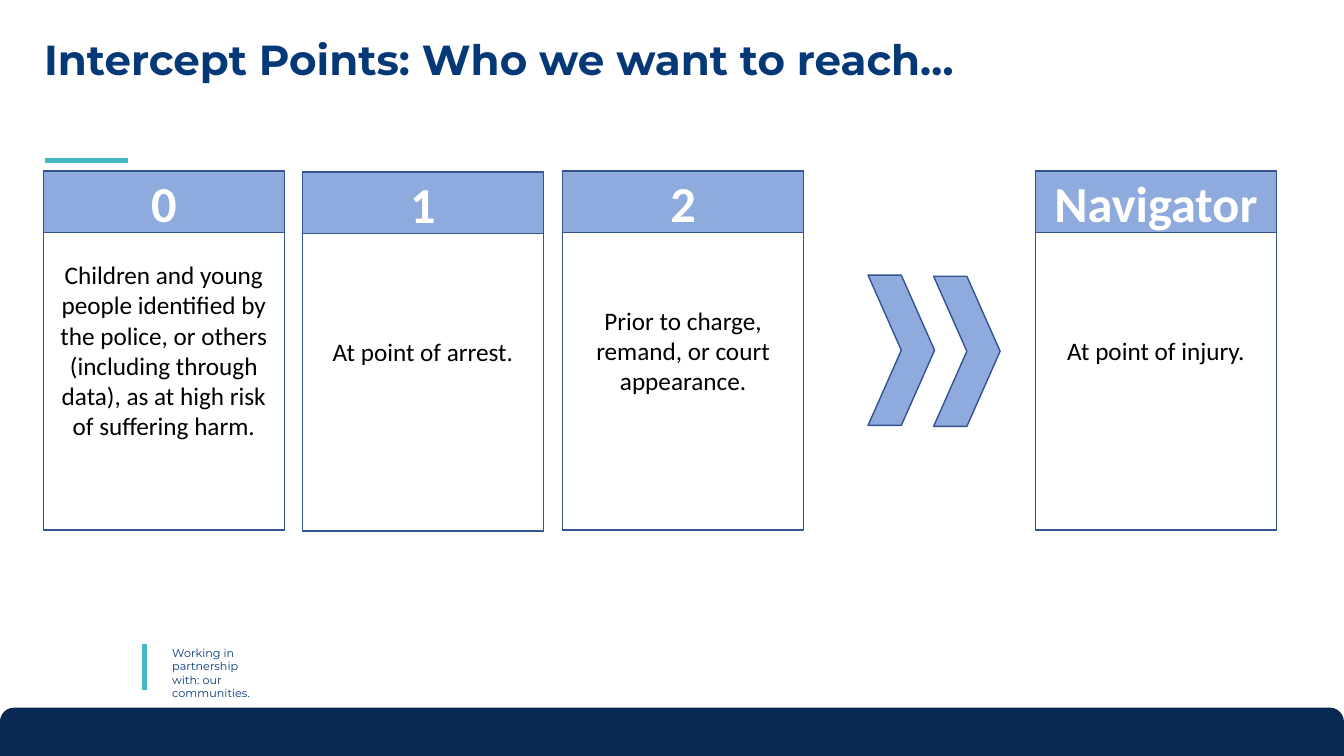
from pptx import Presentation
from pptx.dml.color import RGBColor
from pptx.enum.shapes import MSO_CONNECTOR, MSO_SHAPE
from pptx.enum.text import MSO_ANCHOR, PP_ALIGN
from pptx.oxml.ns import qn
from pptx.util import Emu, Pt

RECTANGLE = MSO_SHAPE.RECTANGLE
ROUNDED = MSO_SHAPE.ROUNDED_RECTANGLE
CHEVRON = MSO_SHAPE.CHEVRON
STRAIGHT = MSO_CONNECTOR.STRAIGHT
TOP, MIDDLE = MSO_ANCHOR.TOP, MSO_ANCHOR.MIDDLE
LEFT, CENTER = PP_ALIGN.LEFT, PP_ALIGN.CENTER

EMU_PER_PX = 9144
SLIDE_WIDTH, SLIDE_HEIGHT = 1333, 750
NAVY, BLUE, TEAL = "082A52", "043876", "43BAC3"
PALE_BLUE, OUTLINE = "8FAADC", "325491"
WHITE, BLACK = "FFFFFF", "000000"
CARD_WIDTH, CARD_HEIGHT, HEADER_HEIGHT = 239, 357, 61

CARDS = [
    (43, 169, "0", "Children and young people identified by the police, or others "
     "(including through data), as at high risk of suffering harm."),
    (300, 170, "1", "At point of arrest."),
    (558, 169, "2", "Prior to charge, remand, or court appearance."),
    (1027, 169, "Navigator", "At point of injury."),
]


def px(length):
    """Turn whole px into EMU."""
    return Emu(length * EMU_PER_PX)


def color(hex_value):
    """Turn a hex string into a colour."""
    return RGBColor.from_string(hex_value)


def write(shape, text, size, font_name, hex_value, bold=False, align=LEFT, anchor=TOP):
    """Fill a shape with evenly formatted text."""
    frame = shape.text_frame
    frame.text = text
    frame.word_wrap = True
    frame.vertical_anchor = anchor
    for paragraph in frame.paragraphs:
        paragraph.alignment = align
        for run in paragraph.runs:
            run.font.size = Pt(size)
            run.font.name = font_name
            run.font.bold = bold
            run.font.color.rgb = color(hex_value)


def add_box(shapes, kind, left, top, width, height, fill=None, line=None):
    """Add a flat preset shape."""
    shape = shapes.add_shape(kind, px(left), px(top), px(width), px(height))
    shape.shadow.inherit = False
    if fill:
        shape.fill.solid()
        shape.fill.fore_color.rgb = color(fill)
    else:
        shape.fill.background()
    if line:
        shape.line.color.rgb = color(line)
        shape.line.width = Pt(1)
    else:
        shape.line.fill.background()
    return shape


def add_accent(shapes, left, top, right, bottom):
    """Add a thick teal accent line."""
    line = shapes.add_connector(STRAIGHT, px(left), px(top), px(right), px(bottom))
    line.line.color.rgb = color(TEAL)
    line.line.width = Pt(3.75)
    properties = line._element.spPr
    properties.append(properties.makeelement(qn("a:effectLst"), {}))


def add_text(shapes, left, top, width, height, text, size, bold=False):
    """Add a blue Montserrat text box."""
    box = shapes.add_textbox(px(left), px(top), px(width), px(height))
    write(box, text, size, "Montserrat", BLUE, bold)
    return box


def add_card(shapes, left, top, heading, body):
    """Add a grouped card with a header band and centred body."""
    card = shapes.add_group_shape().shapes
    panel = add_box(card, RECTANGLE, left, top, CARD_WIDTH, CARD_HEIGHT, line=OUTLINE)
    write(panel, body, 18, "Calibri", BLACK, align=CENTER, anchor=MIDDLE)
    header = add_box(card, RECTANGLE, left, top + 1, CARD_WIDTH, HEADER_HEIGHT,
                     PALE_BLUE, OUTLINE)
    write(header, heading, 36, "Calibri", WHITE, True, CENTER, MIDDLE)


def main():
    """Build and save the slide."""
    presentation = Presentation()
    presentation.slide_width = px(SLIDE_WIDTH)
    presentation.slide_height = px(SLIDE_HEIGHT)
    slide = presentation.slides.add_slide(presentation.slide_layouts[6])
    shapes = slide.shapes

    add_box(shapes, RECTANGLE, 0, 716, SLIDE_WIDTH, 34, NAVY)
    footer_top = add_box(shapes, ROUNDED, 0, 702, SLIDE_WIDTH, 28, NAVY)
    footer_top.adjustments[0] = 0.5
    add_accent(shapes, 45, 159, 127, 159)
    add_accent(shapes, 143, 639, 143, 685)
    add_text(shapes, 161, 636, 107, 64,
             "Working in partnership\nwith: our communities.", 8)
    title = add_text(shapes, 34, 34, 1110, 99,
                     "Intercept Points: Who we want to reach…", 30, True)
    title.text_frame.paragraphs[0].line_spacing = 0.9

    for left, top, heading, body in CARDS:
        add_card(shapes, left, top, heading, body)
    for left, top in ((861, 273), (926, 274)):
        add_box(shapes, CHEVRON, left, top, 66, 149, PALE_BLUE, OUTLINE)

    presentation.save("out.pptx")


if __name__ == "__main__":
    main()
